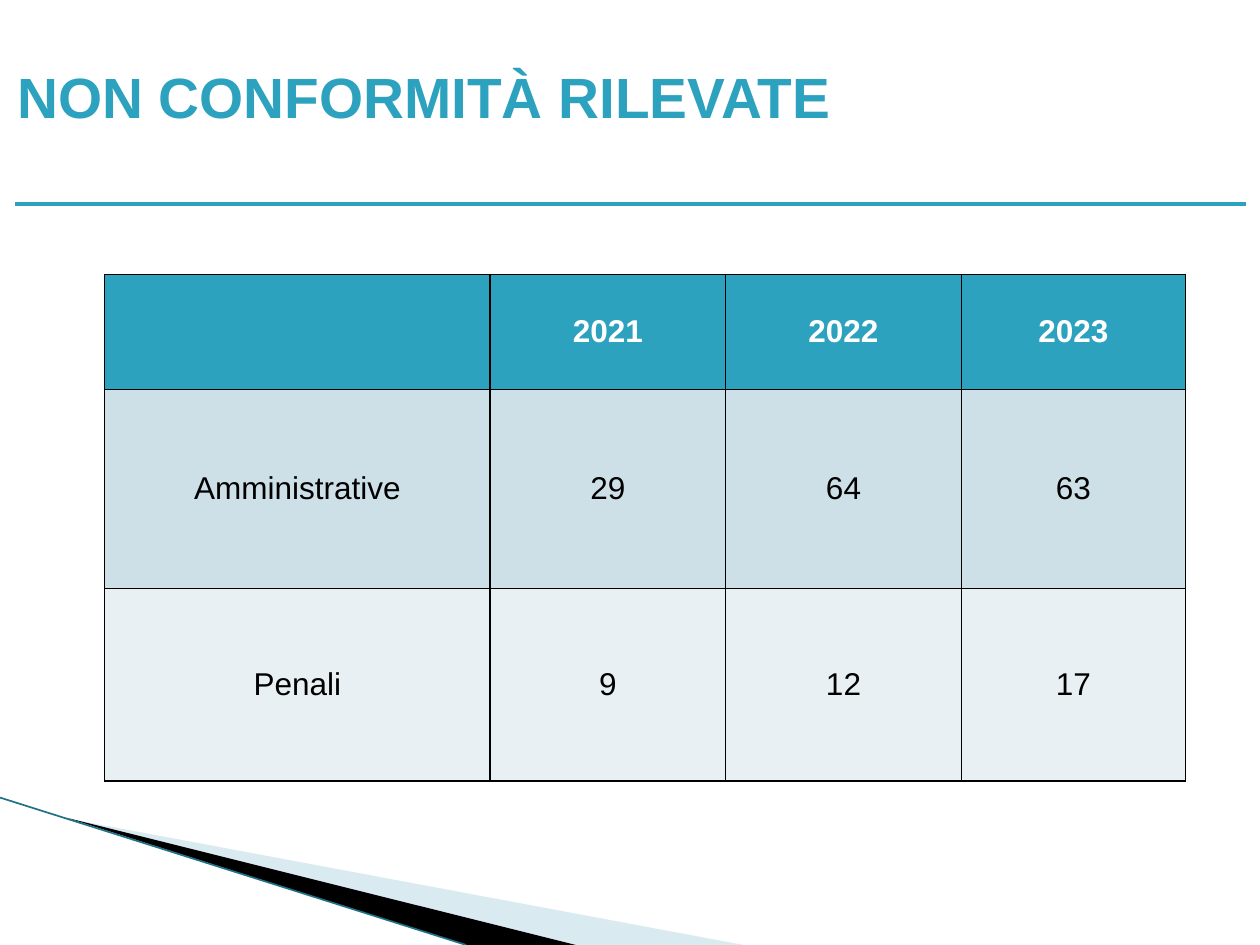
from collections import namedtuple
from dataclasses import dataclass

from lxml import etree
from pptx import Presentation
from pptx.dml.color import RGBColor
from pptx.enum import shapes, text
from pptx.oxml import ns
from pptx.util import Inches, Pt

Box = namedtuple("Box", "x y w h")


@dataclass(frozen=True)
class Theme:
    font: str = "Arial"
    accent: str = "2DA2BF"
    pale: str = "A0CBDC"
    edge: str = "1F7186"
    dark: str = "000000"
    light: str = "FFFFFF"
    bands: tuple = ("CDE0E8", "E8F0F4")
    title_size: float = 32.4
    table_size: float = 18
    border: float = 1


THEME = Theme()


def rgb(value):
    return RGBColor.from_string(value)


def sub(parent, tag, **attrs):
    return etree.SubElement(parent, ns.qn(tag), attrs)


def write(tf, content, size, color, bold=False):
    p = tf.paragraphs[0]
    p.alignment = text.PP_ALIGN.CENTER
    r = p.add_run()
    r.text = content
    r.font.name = THEME.font
    r.font.size = Pt(size)
    r.font.bold = bold
    r.font.color.rgb = rgb(color)


def add_line(s, start, end, color, width):
    line = s.shapes.add_connector(
        shapes.MSO_CONNECTOR.STRAIGHT, *(Inches(v) for v in start + end))
    line.line.color.rgb = rgb(color)
    line.line.width = Pt(width)
    sub(line._element.spPr, "a:effectLst")


def add_wedge(s, box, points, color, alpha=None):
    pts = [(Inches(box.x + x), Inches(box.y + y)) for x, y in points]
    builder = s.shapes.build_freeform(*pts[0])
    builder.add_line_segments(pts[1:], close=True)
    sp = builder.convert_to_shape()
    sp.shadow.inherit = False
    sp.fill.solid()
    sp.fill.fore_color.rgb = rgb(color)
    sp.line.fill.background()
    if alpha is not None:
        clr = sp._element.spPr.find(".//" + ns.qn("a:srgbClr"))
        sub(clr, "a:alpha", val=str(alpha * 1000))


def draw_sweep(s, box):
    add_wedge(s, box, [(0.55, 0.17), (box.w, box.h), (4.56, box.h)],
              THEME.pale, alpha=40)
    add_wedge(s, box, [(0.53, 0.16), (4.57, box.h), (3.7, box.h)], THEME.dark)
    add_line(s, (box.x, box.y), (box.x + 3.7, box.y + box.h), THEME.edge, 0.95)


def draw_heading(s, box, content):
    sp = s.shapes.title
    sp.left, sp.top = Inches(box.x), Inches(box.y)
    sp.width, sp.height = Inches(6.73), Inches(box.h)
    tf = sp.text_frame
    tf.word_wrap = True
    tf.auto_size = text.MSO_AUTO_SIZE.NONE
    tf.vertical_anchor = text.MSO_ANCHOR.TOP
    tf.margin_left = tf.margin_right = Inches(0.05)
    write(tf, content, THEME.title_size, THEME.accent, bold=True)
    rule_y = box.y + 1.18
    add_line(s, (box.x + 0.12, rule_y), (box.x + box.w, rule_y), THEME.accent, 2)


def add_borders(cell):
    tc_pr = cell._tc.get_or_add_tcPr()
    for i, side in enumerate("LRTB"):
        ln = sub(tc_pr, f"a:ln{side}", w=str(Pt(THEME.border)))
        sub(sub(ln, "a:solidFill"), "a:srgbClr", val=THEME.dark)
        tc_pr.insert(i, ln)


def draw_table(s, box, rows, widths, heights):
    frame = s.shapes.add_table(
        len(rows), len(widths), *(Inches(v) for v in box))
    table = frame.table
    for col, width in zip(table.columns, widths):
        col.width = Inches(width)
    fills = (THEME.accent,) + THEME.bands
    for i, (values, height, fill) in enumerate(zip(rows, heights, fills)):
        table.rows[i].height = Inches(height)
        header = i == 0
        for j, value in enumerate(values):
            cell = table.cell(i, j)
            cell.fill.solid()
            cell.fill.fore_color.rgb = rgb(fill)
            cell.vertical_anchor = text.MSO_ANCHOR.MIDDLE
            add_borders(cell)
            if value:
                write(cell.text_frame, value, THEME.table_size,
                      THEME.light if header else THEME.dark, bold=header)


def main():
    prs = Presentation()
    prs.slide_width, prs.slide_height = Inches(10), Inches(7.5)
    s = prs.slides.add_slide(prs.slide_layouts[5])
    s.background.fill.solid()
    s.background.fill.fore_color.rgb = rgb(THEME.light)
    draw_sweep(s, Box(0, 6.33, 5.9, 1.17))
    draw_heading(s, Box(0, 0.44, 9.89, 1.11), "NON CONFORMITÀ RILEVATE")
    rows = [
        ("", "2021", "2022", "2023"),
        ("Amministrative", "29", "64", "63"),
        ("Penali", "9", "12", "17"),
    ]
    draw_table(s, Box(0.83, 2.18, 8.58, 4.02), rows,
               widths=(3.06, 1.87, 1.87, 1.78), heights=(0.91, 1.58, 1.53))
    prs.save("out.pptx")


if __name__ == "__main__":
    main()
